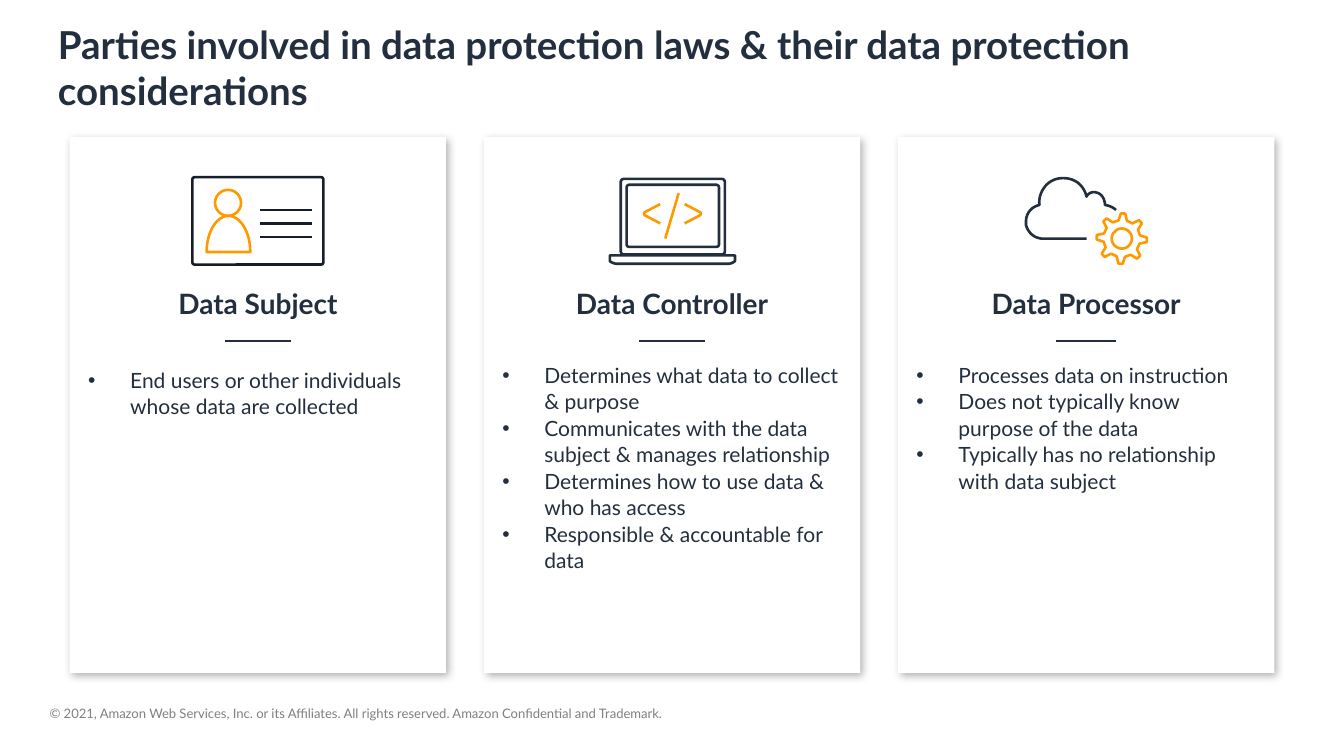
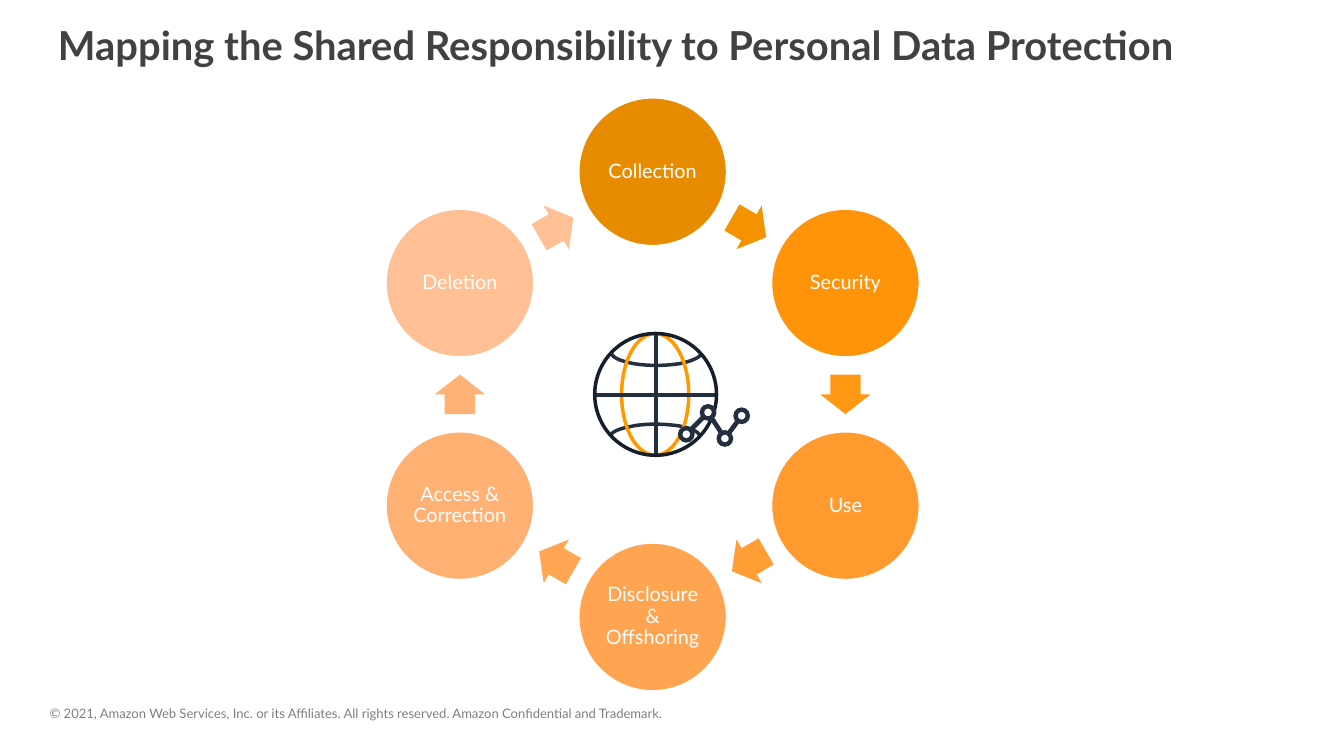
from math import cos, hypot, radians, sin

from lxml.etree import SubElement
from pptx import Presentation
from pptx.dml.color import RGBColor
from pptx.enum.shapes import MSO_CONNECTOR, MSO_SHAPE
from pptx.enum.text import MSO_ANCHOR, MSO_AUTO_SIZE, PP_ALIGN
from pptx.oxml.ns import qn
from pptx.util import Inches, Pt

# Grid of 1600 columns by 900 rows; every length counts its cells
CELL = Inches(0.01)
COLS, ROWS = 1600, 900
FINE = 100  # steps per cell in outlines

FONT = "Lato"
NAVY = RGBColor(0x23, 0x2F, 0x3E)
INK = RGBColor(0x16, 0x1E, 0x2C)
SLATE = RGBColor(0x41, 0x40, 0x42)
GRAY = RGBColor(0x80, 0x80, 0x80)
GOLD = RGBColor(0xFF, 0x99, 0x00)
WHITE = RGBColor(0xFF, 0xFF, 0xFF)

TITLE = (59, 20, 1436, 95)
FOOTER = (59, 840, 778, 19)
NOTICE = ("© 2021, Amazon Web Services, Inc. or its Affiliates. "
          "All rights reserved. Amazon Confidential and Trademark.")


def cells(*nums):
    return [round(n * CELL) for n in nums]


# Shared text and shape helpers
def style(frame, size, color, bold=False, align=PP_ALIGN.LEFT,
          anchor=MSO_ANCHOR.TOP, inset=None, pitch=1.0):
    frame.word_wrap = True
    frame.auto_size = MSO_AUTO_SIZE.NONE
    frame.vertical_anchor = anchor
    if inset is not None:
        pad, = cells(inset)
        frame.margin_left = frame.margin_right = pad
        frame.margin_top = frame.margin_bottom = pad
    for para in frame.paragraphs:
        para.alignment = align
        para.line_spacing = pitch
        para.space_before = para.space_after = Pt(0)
        for run in para.runs:
            font = run.font
            font.name, font.size, font.bold = FONT, Pt(size), bold
            font.color.rgb = color


def place(shape, box):
    shape.left, shape.top, shape.width, shape.height = cells(*box)


def label(slide, box, text, size, color, **looks):
    shape = slide.shapes.add_textbox(*cells(*box))
    shape.text_frame.text = text
    style(shape.text_frame, size, color, **looks)
    return shape


def paint(shape, fill=None, line=None, width=2.25):
    shape.shadow.inherit = False
    if fill is None:
        shape.fill.background()
    else:
        shape.fill.solid()
        shape.fill.fore_color.rgb = fill
    if line is None:
        shape.line.fill.background()
    else:
        shape.line.color.rgb = line
        shape.line.width = Pt(width)
    return shape


def form(slide, kind, box, adjust=(), **looks):
    shape = slide.shapes.add_shape(kind, *cells(*box))
    for i, value in enumerate(adjust):
        shape.adjustments[i] = value
    return paint(shape, **looks)


def stroke(slide, start, end, color, width=2.25):
    line = slide.shapes.add_connector(
        MSO_CONNECTOR.STRAIGHT, *cells(*start, *end))
    line.line.color.rgb = color
    line.line.width = Pt(width)
    SubElement(line._element.spPr, qn("a:effectLst"))


def outline(slide, x, y, points, color, width=2.25, close=False):
    steps = [(px * FINE, py * FINE) for px, py in points]
    pen = slide.shapes.build_freeform(*steps[0], scale=CELL / FINE)
    pen.add_line_segments(steps[1:], close=close)
    paint(pen.convert_to_shape(*cells(x, y)), line=color, width=width)


def trace(route):
    """Turn an outline of M, L and C steps into points along it."""
    points = []
    for step in route.replace("L", "|L").replace("C", "|C").split("|"):
        nums = [float(n) for n in step[1:].split()]
        pairs = list(zip(nums[::2], nums[1::2]))
        if step[0] != "C":
            points += pairs
            continue
        knots = [points[-1]] + pairs
        for i in range(1, 13):
            t = i / 12
            parts = ((1 - t) ** 3, 3 * t * (1 - t) ** 2,
                     3 * t * t * (1 - t), t ** 3)
            points.append(tuple(sum(p * k[axis] for p, k in zip(parts, knots))
                                for axis in (0, 1)))
    return points


def head(slide, text, size, color):
    title = slide.shapes.title
    place(title, TITLE)
    title.text_frame.text = text
    style(title.text_frame, size, color, bold=True)


def footer(deck, slide):
    # Moved to the master, so that every slide shows it
    box = label(slide, FOOTER, NOTICE, 11.2, GRAY, inset=0)
    box._element.nvSpPr.cNvPr.set("id", "99")
    deck.slide_master.shapes._spTree.append(box._element)


# Icons, each drawn from its top left corner
def badge(slide, x, y):
    form(slide, MSO_SHAPE.OVAL, (x + 27, y + 15, 31, 31), line=GOLD)
    bust = trace("M17 89C17 65 29 46 43 46C57 46 69 65 69 89")
    outline(slide, x, y, bust, GOLD, close=True)
    form(slide, MSO_SHAPE.ROUNDED_RECTANGLE, (x, y, 156, 104), [0.025],
         line=INK)
    for row in (39, 55, 71):
        stroke(slide, (x + 81, y + row), (x + 143, y + row), INK)


def laptop(slide, x, y):
    base = trace("M2 93L2 100C5 102 8 103 10 103"
                 "L143 103C146 103 148 102 151 100L151 93")
    outline(slide, x, y, base, NAVY, close=True)
    for box in ((x + 22, y + 9, 110, 74), (x + 15, y + 2, 124, 90)):
        form(slide, MSO_SHAPE.ROUNDED_RECTANGLE, box, [0.04], line=NAVY)
    for sign in ("M84 19L68 73", "M62 32L43 42L43 45L62 55",
                 "M91 32L110 42L110 45L91 55"):
        outline(slide, x, y, trace(sign), GOLD)


def cloud(slide, x, y):
    puff = trace("M73 73L19 73C4 71 1 57 1 57C-1 36 17 33 17 33"
                 "C15 21 24 1 45 1C69 1 73 23 73 23C77 16 84 18 84 18"
                 "C95 20 95 33 95 33C95 33 103 34 108 39")
    outline(slide, x, y, puff, NAVY)
    # Gear: eight teeth around a hole
    mid_x, mid_y = 115, 73
    rim = []
    for tooth in range(8):
        for turn, reach in ((-13, 22), (-5, 30), (5, 30), (13, 22)):
            angle = radians(45 * tooth + 3 + turn)
            rim.append((mid_x + reach * sin(angle),
                        mid_y - reach * cos(angle)))
    outline(slide, x, y, rim, GOLD, close=True)
    form(slide, MSO_SHAPE.OVAL, (x + mid_x - 12, y + mid_y - 12, 24, 24),
         line=GOLD)


def globe(slide, x, y):
    for arc in ("M21 24C21 29 30 33 43 36C52 38 63 39 75 39"
                "C85 39 94 38 102 37C116 34 126 30 128 25",
                "M20 122C22 118 31 114 43 112C51 110 62 109 73 109"
                "C84 109 93 110 101 111C116 114 125 118 126 123"):
        outline(slide, x, y, trace(arc), NAVY, 3)
    form(slide, MSO_SHAPE.OVAL, (x + 33, y + 1, 80, 145), line=GOLD, width=3)
    stroke(slide, (x + 1, y + 74), (x + 146, y + 74), NAVY, 3)
    form(slide, MSO_SHAPE.OVAL, (x + 1, y + 1, 145, 145), line=INK, width=3)
    stroke(slide, (x + 74, y + 3), (x + 74, y + 144), NAVY, 3)
    # Chain of rings, linked edge to edge
    rings = [(x + 110, y + 121), (x + 136, y + 95),
             (x + 156, y + 126), (x + 176, y + 99)]
    for cx, cy in rings:
        form(slide, MSO_SHAPE.DONUT, (cx - 10, cy - 10, 20, 20), [0.27],
             fill=NAVY)
    for (ax, ay), (bx, by) in zip(rings, rings[1:]):
        part = 9 / hypot(bx - ax, by - ay)
        dx, dy = (bx - ax) * part, (by - ay) * part
        stroke(slide, (ax + dx, ay + dy), (bx - dx, by - dy), NAVY, 4)


# Slide 1: three cards
CARDS = [
    ("Data Subject", badge, 156, 78, 271,
     ["End users or other individuals whose data are collected"]),
    ("Data Controller", laptop, 152, 78, 265,
     ["Determines what data to collect & purpose",
      "Communicates with the data subject & manages relationship",
      "Determines how to use data & who has access",
      "Responsible & accountable for data"]),
    ("Data Processor", cloud, 145, 71, 265,
     ["Processes data on instruction",
      "Does not typically know purpose of the data",
      "Typically has no relationship with data subject"]),
]


def bullets(holder, box, items):
    place(holder, box)
    frame = holder.text_frame
    frame.text = items[0]
    for item in items[1:]:
        frame.add_paragraph().text = item
    indent, = cells(50)
    for para in frame.paragraphs:
        props = para._p.get_or_add_pPr()
        props.set("marL", str(indent))
        props.set("indent", str(-indent))
        SubElement(props, qn("a:buFont"), typeface="Arial")
        SubElement(props, qn("a:buChar"), char="•")
    style(frame, 18, NAVY, inset=2, pitch=1.05)


def card(slide, box, holder, data):
    name, icon, wide, rule, drop, items = data
    x, y, w, h = box
    mid = x + w / 2
    panel = form(slide, MSO_SHAPE.RECTANGLE, box, fill=WHITE)
    # Soft shadow to the lower right
    effects = panel._element.spPr.find(qn("a:effectLst"))
    shade = SubElement(effects, qn("a:outerShdw"), blurRad=str(Pt(7)),
                       dist=str(Pt(3)), dir="2700000", algn="tl",
                       rotWithShape="0")
    tint = SubElement(shade, qn("a:srgbClr"), val="000000")
    SubElement(tint, qn("a:alpha"), val="30000")
    icon(slide, mid - wide / 2, y + 48)
    label(slide, (x + 20, y + 173, w - 40, 50), name, 24, NAVY, bold=True,
          align=PP_ALIGN.CENTER)
    stroke(slide, (mid - rule / 2, y + 243), (mid + rule / 2, y + 243),
           NAVY, 1.5)
    bullets(holder, (x + 20, y + drop, w - 40, 327), items)
    slide.shapes._spTree.append(holder._element)  # in front of its panel


def parties(slide):
    head(slide, "Parties involved in data protection laws & "
         "their data protection considerations", 33, NAVY)
    first, second, third, spare = list(slide.placeholders)[1:]
    spare._element.getparent().remove(spare._element)
    for i, holder in enumerate((first, second, third)):
        card(slide, (83 + 493 * i, 163, 448, 638), holder, CARDS[i])


# Slide 2: ring of stages, each with the arrow that follows it
STAGES = [
    ("Collection", "E78B00", "F49200"),
    ("Security", "FF940B", "FF9815"),
    ("Use", "FF9B2E", "FF9E35"),
    ("Disclosure & Offshoring", "FFA450", "FFA755"),
    ("Access & Correction", "FFB173", "FFB275"),
    ("Deletion", "FFC095", "FFC095"),
]


def cycle(slide, box):
    x, y, w, h = box
    size = 177
    reach = (h - size) / 2
    turn = 360 / len(STAGES)

    def seat(angle, far, wide, high):
        a = radians(angle)
        return (x + w / 2 + far * sin(a) - wide / 2,
                y + h / 2 - far * cos(a) - high / 2, wide, high)

    for i, (name, fill, next_fill) in enumerate(STAGES):
        disc = form(slide, MSO_SHAPE.OVAL, seat(i * turn, reach, size, size),
                    fill=RGBColor.from_string(fill), line=WHITE, width=2)
        disc.text_frame.text = name
        style(disc.text_frame, 17, WHITE, align=PP_ALIGN.CENTER,
              anchor=MSO_ANCHOR.MIDDLE, inset=2, pitch=0.9)
        angle = (i + 0.5) * turn
        far = reach * cos(radians(turn / 2))
        arrow = form(slide, MSO_SHAPE.RIGHT_ARROW, seat(angle, far, 47, 60),
                     [0.6, 0.5], fill=RGBColor.from_string(next_fill))
        arrow.rotation = angle


def mapping(slide):
    head(slide, "Mapping the Shared Responsibility to "
         "Personal Data Protection", 34.2, SLATE)
    cycle(slide, (459, 116, 636, 707))
    globe(slide, 707, 396)


def main():
    deck = Presentation()
    deck.slide_width, deck.slide_height = cells(COLS, ROWS)
    first = deck.slides.add_slide(deck.slide_layouts[4])
    footer(deck, first)
    parties(first)
    mapping(deck.slides.add_slide(deck.slide_layouts[5]))
    deck.save("out.pptx")


if __name__ == "__main__":
    main()
